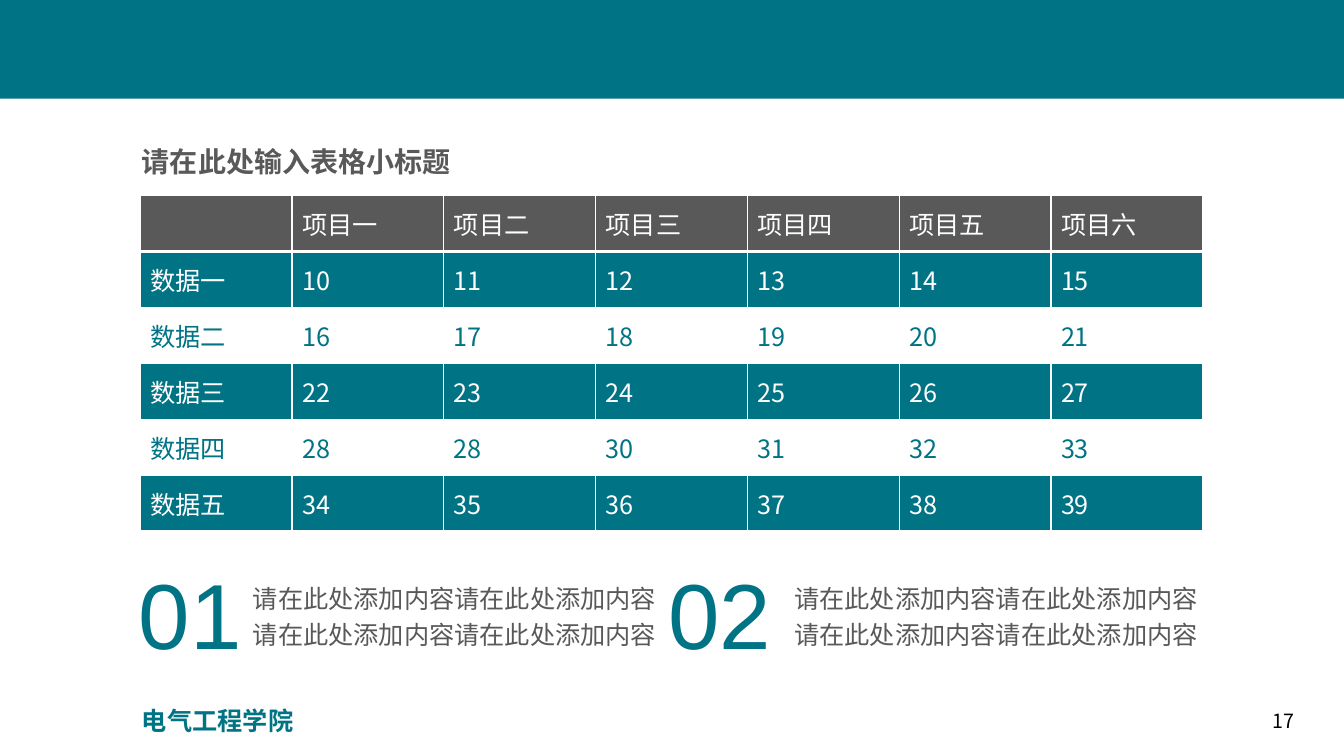
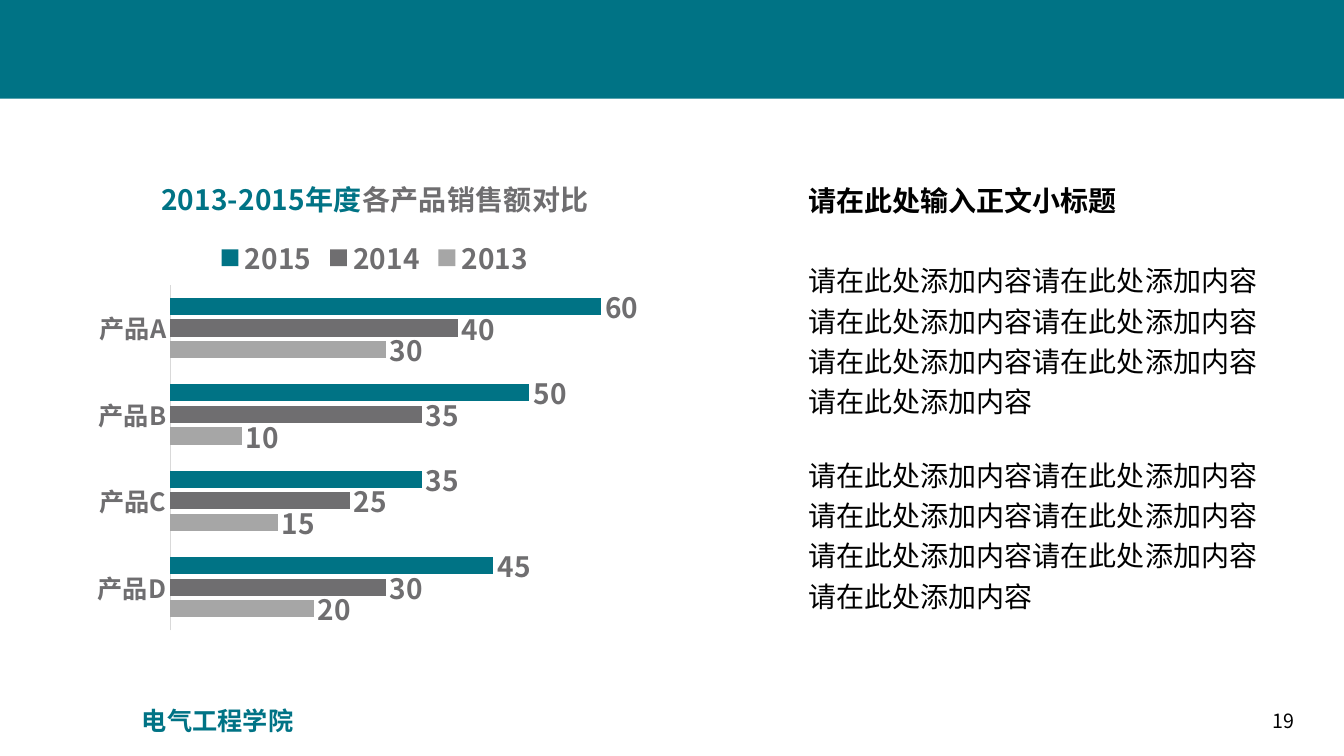
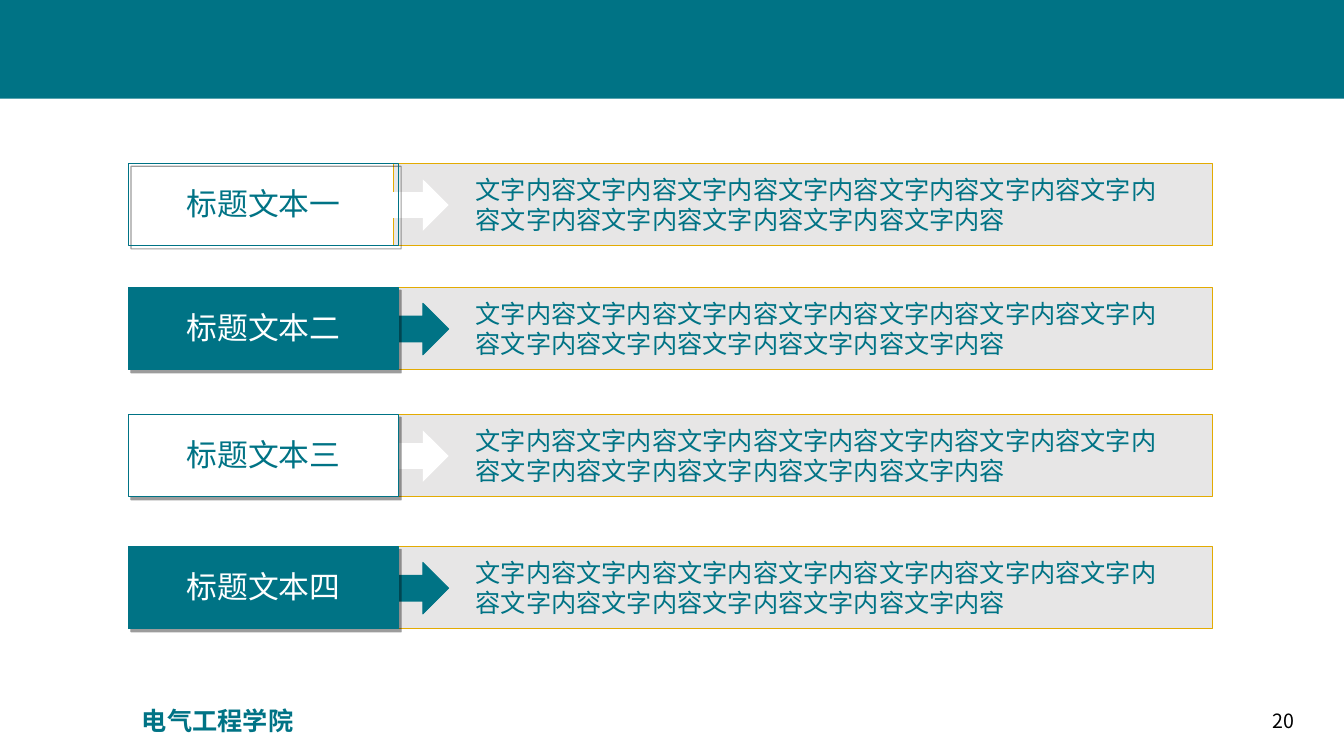
"""Builds three college template slides: a table, a bar chart and a list of titled rows."""
from lxml import etree
from pptx import Presentation
from pptx import util as u
from pptx.chart import data
from pptx.dml.color import RGBColor
from pptx.enum import chart as ch, shapes, text
from pptx.oxml import parse_xml
from pptx.oxml.ns import nsdecls, qn

TEAL = RGBColor(0x00, 0x73, 0x85)
WHITE = RGBColor(0xFF, 0xFF, 0xFF)
BLACK = RGBColor(0x00, 0x00, 0x00)
DARK = RGBColor(0x59, 0x59, 0x59)
GRAY = RGBColor(0x6F, 0x6E, 0x70)
SILVER = RGBColor(0xA6, 0xA6, 0xA6)
PALE = RGBColor(0xE7, 0xE6, 0xE6)
RULE = RGBColor(0xD9, 0xD9, 0xD9)
GOLD = RGBColor(0xE3, 0xAB, 0x02)
FONT = "Noto Sans CJK SC"
PHRASE = "请在此处添加内容"


def style(font, size, color, bold=False, name=FONT):
    font.size, font.bold, font.name = u.Pt(size), bold, name
    font.color.rgb = color


def write(para, words, *, size=18, color=TEAL, bold=False, name=FONT, align=None, spacing=None):
    span = para.add_run()
    span.text = words
    style(span.font, size, color, bold, name)
    if align is not None:
        para.alignment = align
    if spacing:
        para.line_spacing = spacing


def pair_east_asian(root):
    for latin in root.iter(qn("a:latin")):
        east = etree.Element(qn("a:ea"), typeface=latin.get("typeface"))
        latin.addnext(east)


class Board:
    def __init__(self):
        self.deck = Presentation()
        self.deck.slide_width, self.deck.slide_height = u.Inches(13.33), u.Inches(7.5)
        self.page = None

    def start(self, number):
        self.page = self.deck.slides.add_slide(self.deck.slide_layouts[6])
        self.shape(0, 0, 13.33, 0.98, fill=TEAL)
        self.text(9.94, 6.95, 3, 0.4, str(number), grow=False, middle=True,
                  size=14, color=BLACK, align=text.PP_ALIGN.RIGHT)
        self.text(1.31, 6.95, 1.72, 0.4, "电气工程学院", wrap=False, bold=True)

    def shape(self, left, top, width, height, kind=shapes.MSO_SHAPE.RECTANGLE,
              fill=None, line=None, shadow=False):
        box = self.page.shapes.add_shape(kind, *map(u.Inches, (left, top, width, height)))
        for paint, color in ((box.fill, fill), (box.line.fill, line)):
            if color is None:
                paint.background()
            else:
                paint.solid()
                paint.fore_color.rgb = color
        if line is not None:
            box.line.width = u.Pt(0.75)
        box.shadow.inherit = False
        if shadow:
            effects = box.element.spPr.find(qn("a:effectLst"))
            effects.append(parse_xml(
                f'<a:outerShdw {nsdecls("a")} blurRad="0" dist="38100" dir="2700000" '
                'algn="tl" rotWithShape="0"><a:srgbClr val="000000">'
                '<a:alpha val="38000"/></a:srgbClr></a:outerShdw>'))

    def text(self, left, top, width, height, *paragraphs, wrap=True, grow=True,
             middle=False, **format):
        box = self.page.shapes.add_textbox(*map(u.Inches, (left, top, width, height)))
        frame = box.text_frame
        frame.word_wrap = wrap
        if grow:
            frame.auto_size = text.MSO_AUTO_SIZE.SHAPE_TO_FIT_TEXT
        if middle:
            frame.vertical_anchor = text.MSO_ANCHOR.MIDDLE
        for index, words in enumerate(paragraphs):
            para = frame.add_paragraph() if index else frame.paragraphs[0]
            write(para, words, **format)

    def table(self, left, top, width, height, rows):
        frame = self.page.shapes.add_table(
            len(rows), len(rows[0]), *map(u.Inches, (left, top, width, height)))
        for row, values in enumerate(rows):
            fill = DARK if row == 0 else TEAL if row % 2 else WHITE
            for column, value in enumerate(values):
                cell = frame.table.cell(row, column)
                cell.vertical_anchor = text.MSO_ANCHOR.MIDDLE
                self.borders(cell, bottom=1 if row else 3)
                cell.fill.solid()
                cell.fill.fore_color.rgb = fill
                if value:
                    write(cell.text_frame.paragraphs[0], str(value),
                          color=TEAL if fill == WHITE else WHITE)

    def borders(self, cell, bottom):
        properties = cell._tc.get_or_add_tcPr()
        for side, points in (("L", 1), ("R", 1), ("T", 1), ("B", bottom)):
            properties.append(parse_xml(
                f'<a:ln{side} {nsdecls("a")} w="{u.Pt(points)}"><a:solidFill>'
                f'<a:srgbClr val="{WHITE}"/></a:solidFill></a:ln{side}>'))

    def bars(self, left, top, width, height, categories, series, title, layout):
        source = data.CategoryChartData()
        source.categories = categories
        for name, values, _ in series:
            source.add_series(name, values)
        chart = self.page.shapes.add_chart(
            ch.XL_CHART_TYPE.BAR_CLUSTERED,
            *map(u.Inches, (left, top, width, height)), source).chart
        style(chart.font, 10, BLACK)
        para = chart.chart_title.text_frame.paragraphs[0]
        for words, color in title:
            write(para, words, size=20, color=color, bold=True)
        chart.chart_title.include_in_layout = False
        chart.has_legend = True
        chart.legend.position = ch.XL_LEGEND_POSITION.TOP
        chart.legend.include_in_layout = False
        style(chart.legend.font, 20, GRAY, True)

        axis = chart.category_axis
        axis.major_tick_mark = ch.XL_TICK_MARK.NONE
        axis.format.line.color.rgb = RULE
        axis.format.line.width = u.Pt(0.75)
        style(axis.tick_labels.font, 18, GRAY, True)
        scale = chart.value_axis
        scale.minimum_scale, scale.maximum_scale = 0, 70
        scale.has_major_gridlines = False
        scale.visible = False

        plot = chart.plots[0]
        plot.vary_by_categories = False
        plot.gap_width, plot.overlap = 150, -25
        for bar, (_, _, color) in zip(plot.series, series):
            bar.format.fill.solid()
            bar.format.fill.fore_color.rgb = color
            labels = bar.data_labels
            labels.show_value = True
            labels.position = ch.XL_LABEL_POSITION.OUTSIDE_END
            style(labels.font, 20, GRAY, True)
        self.place_plot(chart, layout)
        pair_east_asian(chart.element)

    def place_plot(self, chart, layout):
        area = chart.element.find(".//" + qn("c:plotArea"))
        for old in area.findall(qn("c:layout")):
            area.remove(old)
        settings = [("layoutTarget", "inner"), ("xMode", "edge"), ("yMode", "edge")]
        settings += zip("xywh", layout)
        inside = "".join(f'<c:{tag} val="{value}"/>' for tag, value in settings)
        area.insert(0, parse_xml(
            f'<c:layout {nsdecls("c")}><c:manualLayout>{inside}</c:manualLayout></c:layout>'))

    def save(self):
        for page in self.deck.slides:
            pair_east_asian(page.element)
        self.deck.save("out.pptx")


def table_slide(board):
    board.start(17)
    board.table(1.39, 1.94, 10.54, 3.33, [
        ["", "项目一", "项目二", "项目三", "项目四", "项目五", "项目六"],
        ["数据一", 10, 11, 12, 13, 14, 15],
        ["数据二", 16, 17, 18, 19, 20, 21],
        ["数据三", 22, 23, 24, 25, 26, 27],
        ["数据四", 28, 28, 30, 31, 32, 33],
        ["数据五", 34, 35, 36, 37, 38, 39],
    ])
    for number, left, width, body_left in (("01", 1.28, 1.36, 2.41), ("02", 6.53, 1.8, 7.78)):
        board.text(left, 5.48, width, 1.21, number, size=66, name="Arial")
        board.text(body_left, 5.68, 4.41, 0.83, PHRASE * 4, color=DARK, spacing=1.2)
    board.text(1.31, 1.32, 4.77, 0.5, "请在此处输入表格小标题",
               size=20, color=DARK, bold=True, spacing=1.2)


def chart_slide(board):
    board.start(19)
    board.bars(
        0.64, 1.57, 6.16, 4.83,
        categories=["产品D", "产品C", "产品B", "产品A"],
        series=[("2013", (20, 15, 10, 30), SILVER),
                ("2014", (30, 25, 35, 40), GRAY),
                ("2015", (45, 35, 50, 60), TEAL)],
        title=[("2013-2015年度", TEAL), ("各产品销售额对比", GRAY)],
        layout=(0.17, 0.26, 0.81, 0.71))
    body = {"size": 20, "color": BLACK, "spacing": 1.2}
    board.text(7.92, 1.7, 4.77, 0.47, "请在此处输入正文小标题", bold=True, **body)
    for top in (2.5, 4.43):
        board.text(7.92, top, 4.77, 1.72, PHRASE * 4, PHRASE * 3, **body)


def rows_slide(board):
    board.start(20)
    rows = [("一", 1.62, None), ("二", 2.85, TEAL), ("三", 4.11, WHITE), ("四", 5.42, TEAL)]
    for numeral, top, fill in rows:
        solid = fill == TEAL
        board.shape(3.9, top, 8.13, 0.82, fill=PALE, line=GOLD)
        board.shape(3.82, top + 0.16, 0.63, 0.51, shapes.MSO_SHAPE.RIGHT_ARROW,
                    fill=TEAL if solid else WHITE, line=TEAL if solid else None)
        board.shape(1.27, top, 2.68, 0.82, fill=fill, line=TEAL, shadow=True)
        board.text(1.7, top + 0.16, 1.83, 0.47, "标题文本" + numeral, size=22,
                   color=WHITE if solid else TEAL, align=text.PP_ALIGN.CENTER)
        board.text(4.62, top + 0.06, 7.01, 0.71, "文字内容" * 12)


def main():
    board = Board()
    table_slide(board)
    chart_slide(board)
    rows_slide(board)
    board.save()


if __name__ == "__main__":
    main()
